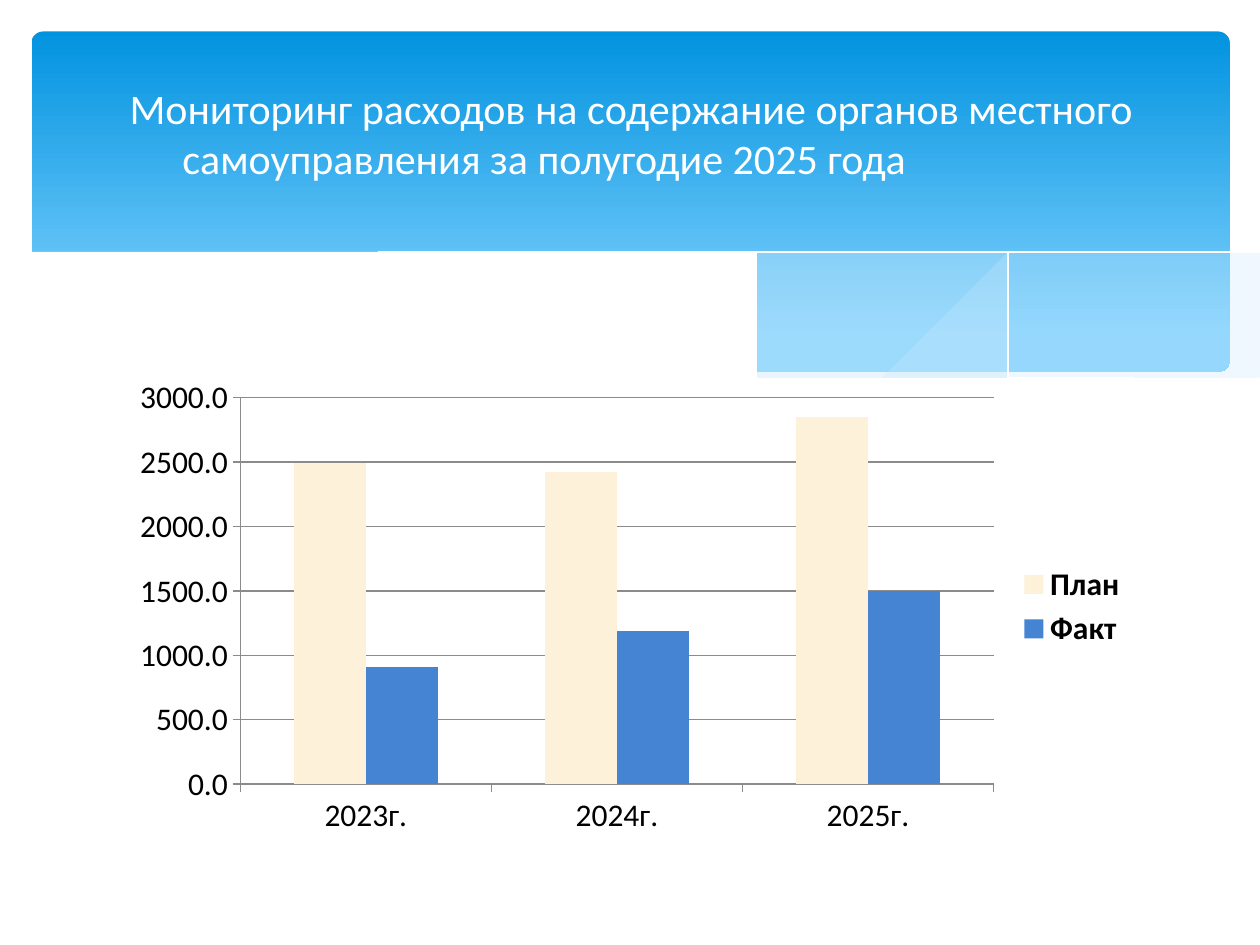
from lxml import etree
from pptx import Presentation
from pptx.chart.data import CategoryChartData
from pptx.dml.color import RGBColor
from pptx.enum.chart import XL_CHART_TYPE, XL_LEGEND_POSITION, XL_TICK_MARK
from pptx.enum.shapes import MSO_SHAPE
from pptx.enum.text import MSO_ANCHOR
from pptx.oxml.ns import qn
from pptx.util import Inches, Pt

COLUMNS = XL_CHART_TYPE.COLUMN_CLUSTERED
LEGEND_RIGHT = XL_LEGEND_POSITION.RIGHT
TICK_OUT = XL_TICK_MARK.OUTSIDE
ROUNDED = MSO_SHAPE.ROUNDED_RECTANGLE
MIDDLE = MSO_ANCHOR.MIDDLE
FONT = "Calibri"
COLORS = {
    "sky_top": "0293E0", "sky_bottom": "83D3FE", "mist": "C6E7FC",
    "white": "FFFFFF", "text": "000000", "axis": "8B8B8B",
    "plan": "FDF2D9", "fact": "4584D3",
}

MIST_RIGHT = [
    [(9.76, 2), (9.35, 2.07), (8.91, 2.16), (8.32, 2.3), (7.53, 2.48), (6.61, 2.65)],
    [(6.61, 2.65), (7.19, 2.72), (7.69, 2.77), (8.14, 2.78), (8.63, 2.75),
     (9.05, 2.69), (9.42, 2.59), (9.76, 2.47)],
]
MIST_CENTER = [
    [(8.93, 2.73), (8.37, 2.65), (7.75, 2.54), (7.06, 2.4), (6.29, 2.22), (5.69, 2.08),
     (5.14, 1.98), (4.65, 1.91), (4.2, 1.87), (3.61, 1.85), (3.13, 1.88), (2.86, 1.91)],
    [(2.86, 1.91), (3.42, 1.99), (4.04, 2.11), (4.49, 2.22), (5.3, 2.4), (6.01, 2.55),
     (6.65, 2.66), (7.22, 2.74), (7.73, 2.77), (8.18, 2.78), (8.57, 2.77), (8.93, 2.73)],
]
FALLING_LINE = [[
    (3.09, 1.95), (3.44, 1.9), (3.87, 1.87), (4.33, 1.87), (4.89, 1.9), (5.56, 1.97),
    (6.36, 2.08), (7.27, 2.26), (7.95, 2.41), (8.69, 2.61), (9.07, 2.72),
]]
RISING_LINE = [[
    (6.13, 2.57), (6.53, 2.46), (6.95, 2.35), (7.48, 2.23), (8.06, 2.1), (8.66, 1.99),
    (9.1, 1.92), (9.51, 1.87), (9.75, 1.85),
]]
WHITE_WAVE = [
    [(9.77, 2.46), (9.4, 2.59), (8.99, 2.69), (8.5, 2.75), (8.09, 2.77), (7.61, 2.75),
     (7.08, 2.7), (6.48, 2.62), (5.79, 2.5), (5.03, 2.33), (4.47, 2.2), (3.91, 2.07),
     (3.4, 1.97), (2.92, 1.9), (2.5, 1.86), (1.93, 1.84), (1.46, 1.85), (1.06, 1.89),
     (0.76, 1.95), (0.52, 2.01), (0.36, 2.07), (0.23, 2.13)],
    [(0.23, 3.29), (9.77, 3.29)],
]


def rgb(name):
    """Return the palette colour with this name."""
    return RGBColor.from_string(COLORS[name])


def set_font(font, size, color, bold=False):
    """Give a font its face, size, colour and weight."""
    font.name, font.size, font.bold = FONT, Pt(size), bold
    font.color.rgb = rgb(color)


def smooth(knots, steps=6):
    """Return points on a Catmull-Rom curve through the knots."""
    padded = [knots[0], *knots, knots[-1]]
    points = [knots[0]]
    for a, b, c, d in zip(padded, padded[1:], padded[2:], padded[3:]):
        for step in range(1, steps + 1):
            t = step / steps
            points.append(tuple(
                (2 * q + (r - p) * t + (2 * p - 5 * q + 4 * r - s) * t ** 2
                 + (3 * q - p - 3 * r + s) * t ** 3) / 2
                for p, q, r, s in zip(a, b, c, d)))
    return points


def write(frame, text, size=18, color="text", left=0, hanging=0):
    """Put text in a frame with its font and hanging indent."""
    paragraph = frame.paragraphs[0]
    run = paragraph.add_run()
    run.text = text
    set_font(run.font, size, color)
    properties = paragraph._p.get_or_add_pPr()
    properties.set("marL", str(Inches(left)))
    properties.set("indent", str(-Inches(hanging)))


class SlideBuilder:
    """Draws the elements of the current slide in one style."""

    def __init__(self, slide):
        self.slide = slide

    def banner(self, left, top, width, height):
        """Draw the rounded gradient banner."""
        banner = self.slide.shapes.add_shape(
            ROUNDED, Inches(left), Inches(top), Inches(width), Inches(height))
        banner.shadow.inherit = False
        banner.adjustments[0] = 0.034
        banner.line.fill.background()
        banner.fill.gradient()
        banner.fill.gradient_angle = 270
        stops = zip(banner.fill.gradient_stops, (0, 0.9), ("sky_top", "sky_bottom"))
        for stop, position, color in stops:
            stop.position = position
            stop.color.rgb = rgb(color)

    def curve(self, edges, color, filled=True, opacity=100):
        """Draw a smooth outline, either filled or as a hairline."""
        points = [point for edge in edges for point in smooth(edge)]
        builder = self.slide.shapes.build_freeform(*points[0], scale=Inches(1))
        builder.add_line_segments(points[1:], close=filled)
        curve = builder.convert_to_shape()
        curve.shadow.inherit = False
        if not filled:
            curve.fill.background()
            curve.line.color.rgb = rgb(color)
            curve.line.width = Pt(0)
            return
        curve.line.fill.background()
        curve.fill.solid()
        curve.fill.fore_color.rgb = rgb(color)
        if opacity < 100:
            tint = curve._element.spPr.find(qn("a:solidFill"))[0]
            etree.SubElement(tint, qn("a:alpha")).set("val", str(opacity * 1000))

    def title(self, text, left, top, width, height):
        """Add the slide title."""
        frame = self.slide.shapes.add_textbox(
            Inches(left), Inches(top), Inches(width), Inches(height)).text_frame
        frame.word_wrap = True
        frame.vertical_anchor = MIDDLE
        write(frame, text, size=24, color="white", left=0.85, hanging=0.42)

    def column_chart(self, years, series, left, top, width, height):
        """Add the clustered column chart."""
        data = CategoryChartData(number_format="0.0")
        data.categories = years
        for name, values, _ in series:
            data.add_series(name, values)
        chart = self.slide.shapes.add_chart(
            COLUMNS, Inches(left), Inches(top), Inches(width), Inches(height), data).chart
        set_font(chart.font, 18, "text")
        chart.has_title = False
        chart.has_legend = True
        chart.legend.position = LEGEND_RIGHT
        chart.legend.include_in_layout = False
        set_font(chart.legend.font, 18, "text", bold=True)
        plot = chart.plots[0]
        plot.gap_width, plot.overlap, plot.vary_by_categories = 150, 0, False
        for columns, (_, _, color) in zip(plot.series, series):
            columns.format.fill.solid()
            columns.format.fill.fore_color.rgb = rgb(color)
        amounts = chart.value_axis
        amounts.minimum_scale, amounts.maximum_scale, amounts.major_unit = 0, 3000, 500
        amounts.tick_labels.number_format = "0.0"
        amounts.tick_labels.number_format_is_linked = False
        amounts.has_major_gridlines = True
        amounts.major_gridlines.format.line.color.rgb = rgb("axis")
        for axis in (chart.category_axis, amounts):
            axis.major_tick_mark = TICK_OUT
            axis.format.line.color.rgb = rgb("axis")


def main():
    """Build and save the presentation."""
    presentation = Presentation()
    presentation.slide_width, presentation.slide_height = Inches(10), Inches(7.5)
    builder = SlideBuilder(presentation.slides.add_slide(presentation.slide_layouts[6]))
    builder.banner(0.25, 0.25, 9.51, 2.7)
    builder.curve(MIST_RIGHT, "mist", opacity=29)
    builder.curve(MIST_CENTER, "mist", opacity=40)
    builder.curve(FALLING_LINE, "white", filled=False)
    builder.curve(RISING_LINE, "white", filled=False)
    builder.curve(WHITE_WAVE, "white")
    builder.column_chart(
        ["2023г.", "2024г.", "2025г."],
        [("План", (2490, 2420, 2850), "plan"), ("Факт", (910, 1190, 1500), "fact")],
        0.95, 2.93, 8.1, 3.77)
    builder.title(
        "Мониторинг расходов на содержание органов местного "
        "самоуправления за полугодие 2025 года", 0.5, 0.37, 9, 1.37)
    presentation.save("out.pptx")


if __name__ == "__main__":
    main()
